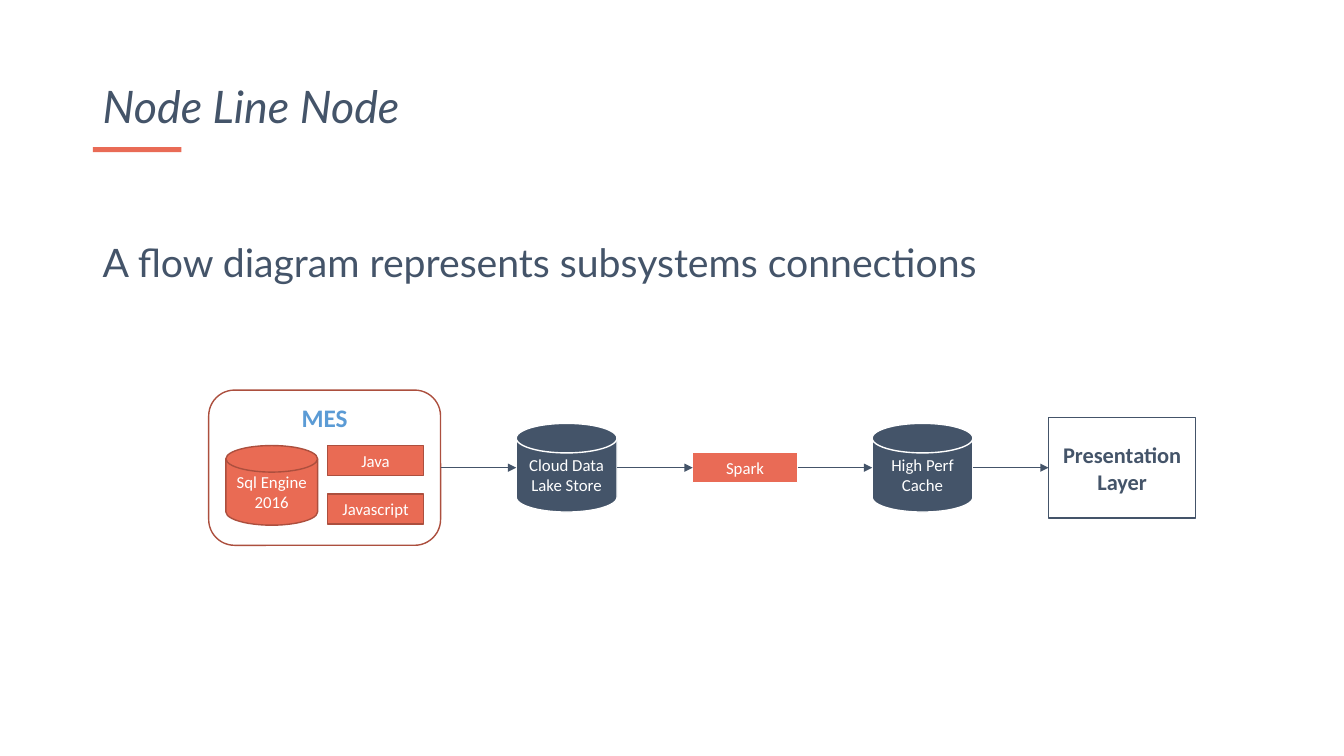
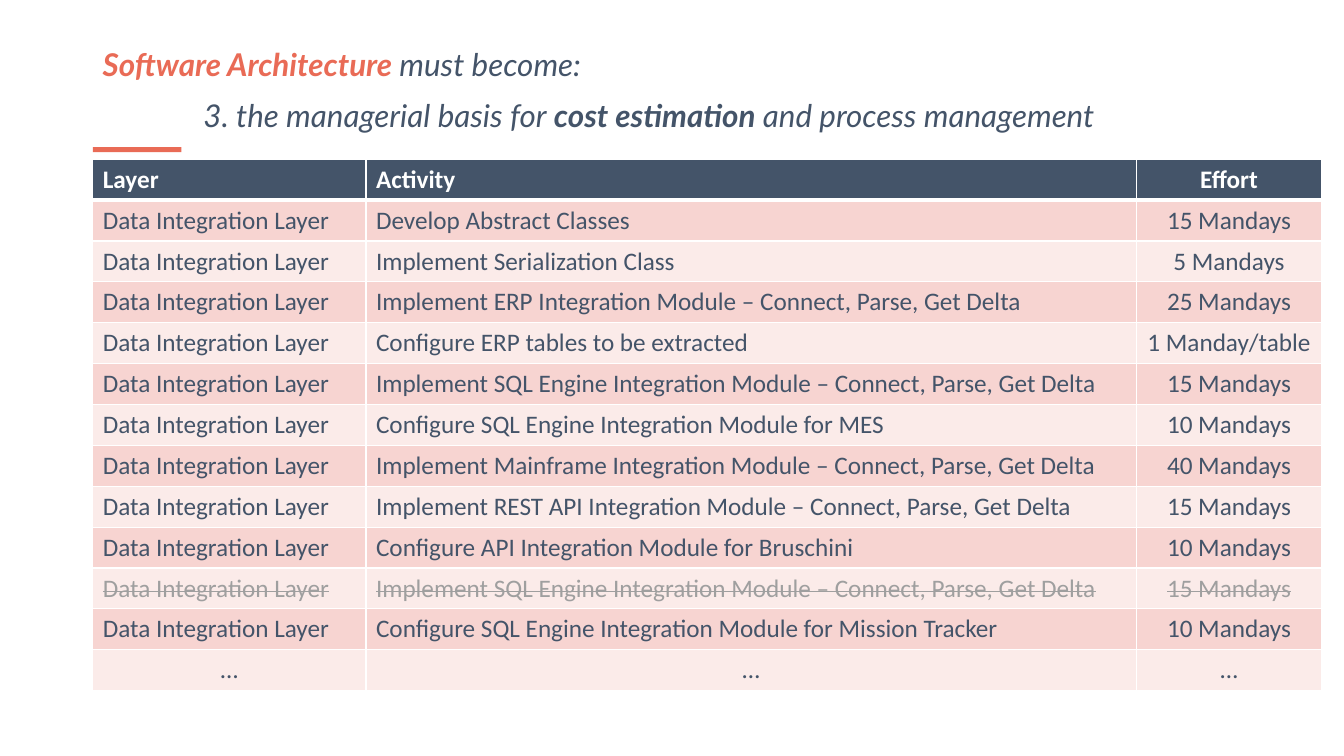
from lxml import etree
from pptx import Presentation
from pptx.dml.color import RGBColor
from pptx.enum.shapes import MSO_CONNECTOR, MSO_SHAPE
from pptx.enum.text import MSO_ANCHOR, PP_ALIGN
from pptx.oxml.ns import qn
from pptx.util import Pt

RECT, ROUND = MSO_SHAPE.RECTANGLE, MSO_SHAPE.ROUNDED_RECTANGLE
DISK = MSO_SHAPE.FLOWCHART_MAGNETIC_DISK
STRAIGHT = MSO_CONNECTOR.STRAIGHT
TOP, MIDDLE, BOTTOM = MSO_ANCHOR.TOP, MSO_ANCHOR.MIDDLE, MSO_ANCHOR.BOTTOM
LEFT, CENTER = PP_ALIGN.LEFT, PP_ALIGN.CENTER
PX = 9144  # 100 px to the inch
WEST, EAST = 1, 3
HEAD = "Lato"
BODY = "Calibri"
HUES = {
    "navy": "445469", "coral": "E96B56", "salmon": "E96B54", "rust": "AC4F3E",
    "blue": "5B9BD5", "white": "FFFFFF", "gray": "9F9F9F",
    "rose": "F7D4D1", "blush": "FBEBE9",
}


def hue(name):
    return RGBColor.from_string(HUES[name])


class Deck:
    def __init__(self):
        self.prs = Presentation()
        self.prs.slide_width, self.prs.slide_height = 1333 * PX, 750 * PX
        self.slide = None

    def start(self):
        """Add a slide with the accent bar under its title."""
        self.slide = self.prs.slides.add_slide(self.prs.slide_layouts[6])
        self.shape(RECT, (92, 146, 88, 5), "coral")

    def font(self, font, size, color, face=BODY, bold=False, italic=False):
        font.name, font.size = face, Pt(size)
        font.color.rgb = hue(color)
        font.bold, font.italic = bold, italic

    def shape(self, kind, box, fill=None, line=None):
        shape = self.slide.shapes.add_shape(kind, *(n * PX for n in box))
        shape.shadow.inherit = False
        if fill:
            shape.fill.solid()
            shape.fill.fore_color.rgb = hue(fill)
        else:
            shape.fill.background()
        if line:
            shape.line.color.rgb = hue(line)
            shape.line.width = Pt(1)
        else:
            shape.line.fill.background()
        return shape

    def node(self, kind, box, text, fill=None, line="white", color="white",
             size=12, bold=False, anchor=MIDDLE):
        """Add a labelled shape."""
        shape = self.shape(kind, box, fill, line)
        frame = shape.text_frame
        frame.word_wrap = True
        frame.vertical_anchor = anchor
        frame.margin_left = frame.margin_right = 5 * PX
        para = frame.paragraphs[0]
        para.text, para.alignment = text, CENTER
        self.font(para.font, size, color, bold=bold)
        return shape

    def frame(self, box, anchor=TOP):
        area = self.slide.shapes.add_textbox(*(n * PX for n in box))
        frame = area.text_frame
        frame.word_wrap = True
        frame.vertical_anchor = anchor
        return frame

    def title(self):
        return self.frame((92, 18, 1150, 119), BOTTOM)

    def plain(self, frame, text, size, italic=False):
        """Fill a frame with one line in the heading face."""
        para = frame.paragraphs[0]
        para.text = text
        para.line_spacing, para.space_before = 0.9, Pt(10)
        self.font(para.font, size, "navy", HEAD, italic=italic)

    def rich(self, frame, lines):
        """Fill a frame with (indent, runs) lines; a run is text, colour, bold."""
        for i, (indent, runs) in enumerate(lines):
            para = frame.add_paragraph() if i else frame.paragraphs[0]
            para.line_spacing, para.space_after = 0.7, Pt(18)
            para._p.get_or_add_pPr().set("marL", str(indent * PX))
            for text, color, bold in runs:
                run = para.add_run()
                run.text = text
                self.font(run.font, 22.4, color, HEAD, bold, True)

    def arrow(self, start, end):
        """Link the facing sides of two shapes."""
        y = start.top + start.height // 2
        link = self.slide.shapes.add_connector(
            STRAIGHT, start.left + start.width, y, end.left, y)
        if start.auto_shape_type != DISK:
            link.begin_connect(start, EAST)
        if end.auto_shape_type != DISK:
            link.end_connect(end, WEST)
        link.line.color.rgb = hue("navy")
        link.line.width = Pt(0.5)
        etree.SubElement(link.line._get_or_add_ln(), qn("a:tailEnd"), type="triangle")
        etree.SubElement(link._element.spPr, qn("a:effectLst"))

    def cell(self, cell, text, fill, color, align, head=False, strike=False):
        props = cell._tc.get_or_add_tcPr()
        for side in "LRTB":
            width = Pt(3 if head and side == "B" else 1)
            edge = etree.SubElement(props, qn("a:ln" + side), w=str(width))
            paint = etree.SubElement(edge, qn("a:solidFill"))
            etree.SubElement(paint, qn("a:srgbClr"), val=HUES["white"])
        cell.fill.solid()
        cell.fill.fore_color.rgb = hue(fill)
        para = cell.text_frame.paragraphs[0]
        para.text, para.alignment = text, align
        self.font(para.font, 18, color, bold=head)
        if strike:
            para.runs[0]._r.get_or_add_rPr().set("strike", "sngStrike")

    def table(self, box, widths, rows, struck):
        grid = self.slide.shapes.add_table(
            len(rows), len(widths), *(n * PX for n in box)).table
        for col, width in zip(grid.columns, widths):
            col.width = width * PX
        for r, row in enumerate(rows):
            head, strike = r == 0, r == struck
            fill = "navy" if head else "rose" if r % 2 else "blush"
            color = "white" if head else "gray" if strike else "navy"
            for c, text in enumerate(row):
                align = CENTER if c == 2 or text == "…" else LEFT
                self.cell(grid.cell(r, c), text, fill, color, align, head, strike)


def flow(deck):
    deck.start()
    deck.plain(deck.frame((92, 237, 1150, 476)),
               "A flow diagram represents subsystems connections", 28)
    deck.plain(deck.title(), "Node Line Node", 32, italic=True)

    mes = deck.node(ROUND, (207, 387, 230, 154), "MES", line="rust",
                    color="blue", size=18, bold=True, anchor=TOP)
    for kind, box, text in (
            (DISK, (224, 442, 91, 79), "Sql Engine 2016"),
            (RECT, (325, 442, 95, 30), "Java"),
            (RECT, (325, 490, 95, 30), "Javascript")):
        deck.node(kind, box, text, "salmon", "rust")

    chain = [
        mes,
        deck.node(DISK, (512, 420, 100, 88), "Cloud Data Lake Store", "navy"),
        deck.node(RECT, (687, 449, 104, 30), "Spark", "coral"),
        deck.node(DISK, (865, 420, 100, 88), "High Perf Cache", "navy"),
        deck.node(RECT, (1040, 414, 146, 100), "Presentation Layer",
                  line="navy", color="navy", size=16, bold=True),
    ]
    for start, end in zip(chain, chain[1:]):
        deck.arrow(start, end)


def costs(deck):
    layer = "Data Integration Layer"
    delta = "Integration Module – Connect, Parse, Get Delta"
    tasks = [
        ("Develop Abstract Classes", "15 Mandays"),
        ("Implement Serialization Class", "5 Mandays"),
        (f"Implement ERP {delta}", "25 Mandays"),
        ("Configure ERP tables to be extracted", "1 Manday/table"),
        (f"Implement SQL Engine {delta}", "15 Mandays"),
        ("Configure SQL Engine Integration Module for MES", "10 Mandays"),
        (f"Implement Mainframe {delta}", "40 Mandays"),
        (f"Implement REST API {delta}", "15 Mandays"),
        ("Configure API Integration Module for Bruschini", "10 Mandays"),
        (f"Implement SQL Engine {delta}", "15 Mandays"),
        ("Configure SQL Engine Integration Module for Mission Tracker", "10 Mandays"),
    ]
    rows = [("Layer", "Activity", "Effort"),
            *((layer, *task) for task in tasks), ("…",) * 3]
    deck.start()
    deck.table((92, 158, 1219, 527), (271, 764, 184), rows, struck=10)
    deck.rich(deck.title(), [
        (0, [("Software Architecture ", "coral", True),
             ("must become:", "navy", False)]),
        (100, [("3. the managerial basis for ", "navy", False),
               ("cost estimation ", "navy", True),
               ("and process management", "navy", False)]),
    ])


def main():
    deck = Deck()
    flow(deck)
    costs(deck)
    deck.prs.save("out.pptx")


if __name__ == "__main__":
    main()
